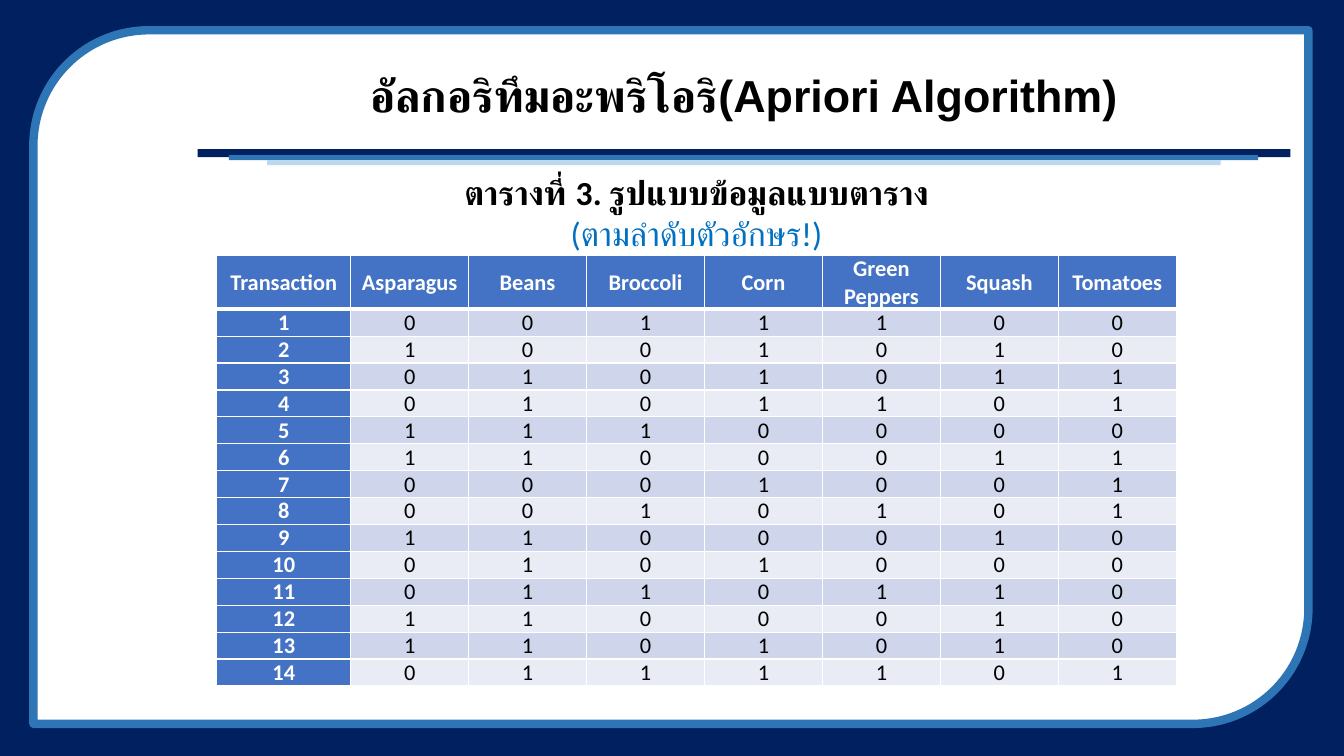
import pptx
import pptx.util
import pptx.dml.color
import pptx.enum.shapes
import pptx.enum.text
import pptx.oxml

Pt = pptx.util.Pt
RGB = pptx.dml.color.RGBColor.from_string
SHAPE = pptx.enum.shapes.MSO_SHAPE
ANCHOR = pptx.enum.text.MSO_ANCHOR
CENTER = pptx.enum.text.PP_ALIGN.CENTER

COLORS = {
    "navy": "002060", "blue": "2E75B6", "pale": "BDD7EE",
    "white": "FFFFFF", "black": "000000", "note": "0070C0",
    "head": "4472C4", "odd": "CFD5EA", "even": "E9EBF5",
}
TITLE = {"name": "Arial", "size": Pt(32), "bold": True}
CAPTION = {"name": "Calibri", "size": Pt(24), "bold": True}
NOTE = {"name": "Calibri", "size": Pt(24), "bold": False}
HEAD = {"name": "Calibri", "size": Pt(16), "bold": True}
VALUE = {"name": "Calibri", "size": Pt(16), "bold": False}

ITEMS = ["Asparagus", "Beans", "Broccoli", "Corn", "Green\nPeppers", "Squash", "Tomatoes"]
BASKETS = [
    "0011100", "1001010", "0101011", "0101101", "1110000", "1100011", "0001001",
    "0010101", "1100010", "0101000", "0110110", "1100010", "1101010", "0111101",
]


def write(tf, text, color, fmt, p=None, **para):
    for i, line in enumerate(text.split("\n")):
        p = p if p is not None and i == 0 else tf.paragraphs[0] if i == 0 else tf.add_paragraph()
        for key, value in {"alignment": CENTER, **para}.items():
            setattr(p, key, value)
        r = p.add_run()
        r.text = line
        for key, value in fmt.items():
            setattr(r.font, key, value)
        r.font.color.rgb = RGB(COLORS[color])


def add_block(shapes, kind, box, fill):
    sp = shapes.add_shape(kind, *map(Pt, box))
    sp.shadow.inherit = False
    sp.fill.solid()
    sp.fill.fore_color.rgb = RGB(COLORS[fill])
    sp.line.fill.background()
    return sp


def add_text(s, box, anchor):
    tf = s.shapes.add_textbox(*map(Pt, box)).text_frame
    tf.word_wrap = True
    tf.vertical_anchor = anchor
    return tf


def draw_frame(s, box):
    x, y, w, h = box
    add_block(s.shapes, SHAPE.RECTANGLE, box, "navy")
    panel = (x + 23.8, y + 21.6, w - 49.2, h - 44.6)
    sp = add_block(s.shapes, SHAPE.ROUND_2_DIAG_RECTANGLE, panel, "white")
    sp.rotation = 180
    sp.line.color.rgb = RGB(COLORS["blue"])
    sp.line.width = Pt(6)


def draw_title(s, box):
    x, y, w, h = box
    tf = add_text(s, (x, y, w, 69.8), ANCHOR.MIDDLE)
    write(tf, "อัลกอริทึมอะพริโอริ(Apriori Algorithm)", "black", TITLE, line_spacing=0.9)
    group = s.shapes.add_group_shape()
    bars = [(0, 71.3, 0, 5.8, "navy"), (22.3, 75.6, 45.4, 3.6, "blue"),
            (49.7, 79.2, 99.4, 3.6, "pale")]
    for dx, dy, cut, thick, color in bars:
        add_block(group.shapes, SHAPE.RECTANGLE, (x + dx, y + dy, w - cut, thick), color)


def draw_caption(s, box):
    tf = add_text(s, box, ANCHOR.TOP)
    write(tf, "ตารางที่ 3. รูปแบบข้อมูลแบบตาราง", "black", CAPTION)
    write(tf, "(ตามลำดับตัวอักษร!)", "note", NOTE, p=tf.add_paragraph())


def set_borders(cell, widths):
    tcPr = cell._tc.get_or_add_tcPr()
    for side, width in zip("LRTB", widths):
        tcPr.append(pptx.oxml.parse_xml(
            f'<a:ln{side} xmlns:a="http://schemas.openxmlformats.org/drawingml/2006/main" '
            f'w="{Pt(width)}"><a:solidFill><a:srgbClr val="{COLORS["white"]}"/>'
            f'</a:solidFill></a:ln{side}>'))


def fill_cell(cell, i, j, text):
    header = i == 0 or j == 0
    for key, value in {"margin_left": Pt(5), "margin_right": Pt(5), "margin_top": 0,
                       "margin_bottom": 0, "vertical_anchor": ANCHOR.MIDDLE}.items():
        setattr(cell, key, value)
    set_borders(cell, (1, 1, 3 if i == 1 else 1, 3 if i == 0 else 1))
    cell.fill.solid()
    fill = "head" if header else "odd" if i % 2 else "even"
    cell.fill.fore_color.rgb = RGB(COLORS[fill])
    write(cell.text_frame, text, "white" if header else "black", HEAD if header else VALUE)


def draw_table(s, box):
    x, y, w, h = box
    rows = [["Transaction", *ITEMS]]
    rows += [[str(n), *basket] for n, basket in enumerate(BASKETS, 1)]
    first_w, head_h = 95.6, 38.4
    table = s.shapes.add_table(len(rows), len(rows[0]), *map(Pt, box)).table
    for j, col in enumerate(table.columns):
        col.width = Pt(first_w if j == 0 else (w - first_w) / len(ITEMS))
    for i, row in enumerate(table.rows):
        row.height = Pt(head_h if i == 0 else (h - head_h) / len(BASKETS))
        for j, cell in enumerate(row.cells):
            fill_cell(cell, i, j, rows[i][j])


def main():
    prs = pptx.Presentation()
    prs.slide_width, prs.slide_height = Pt(960), Pt(540)
    s = prs.slides.add_slide(prs.slide_layouts[6])
    draw_frame(s, (0, 0, 960, 540))
    draw_title(s, (141.2, 35.2, 780.5, 83))
    draw_caption(s, (89.3, 119.5, 816.5, 356.4))
    draw_table(s, (154.9, 182.5, 685.4, 307.4))
    prs.save("out.pptx")


if __name__ == "__main__":
    main()
